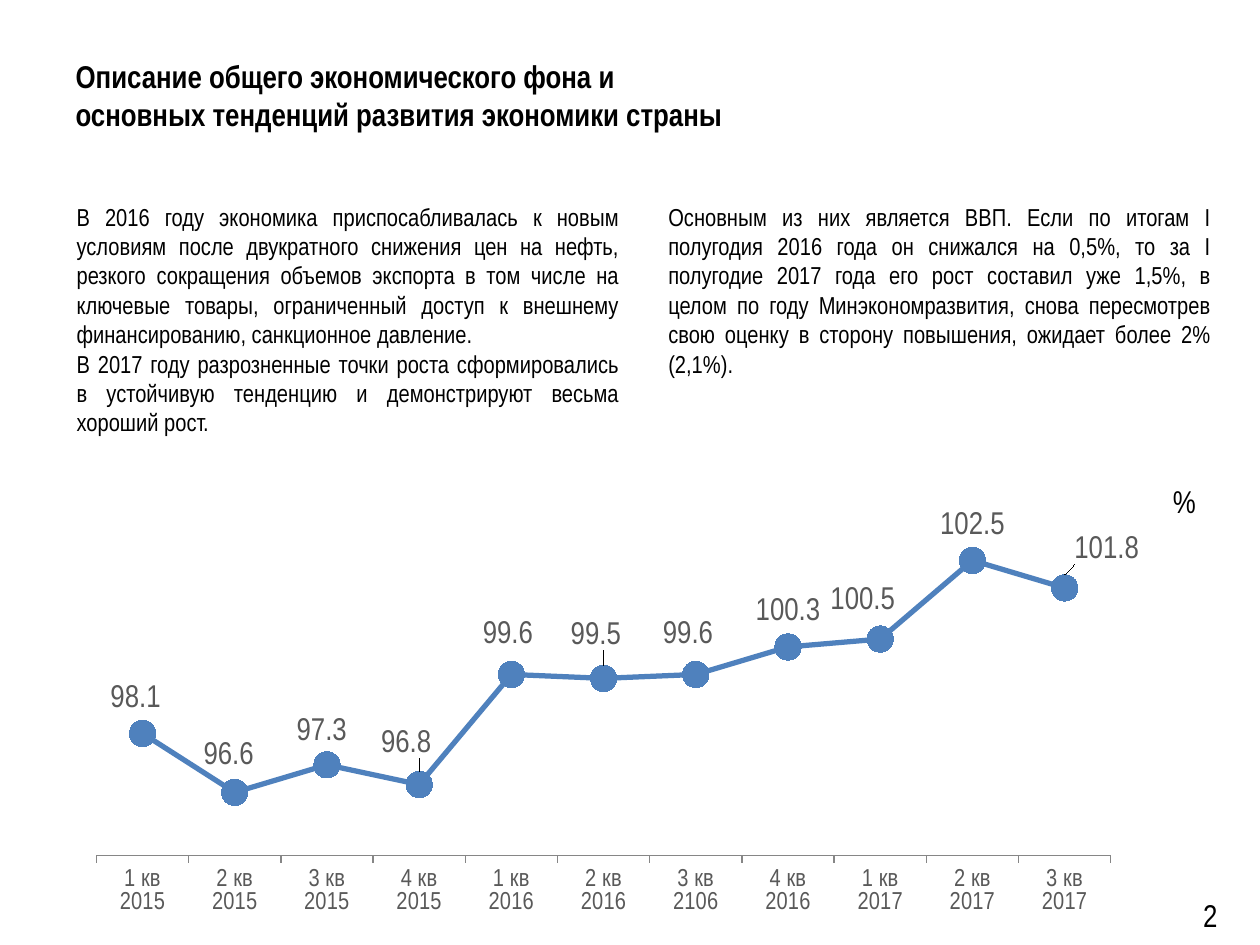
from lxml.etree import SubElement
from pptx import Presentation
from pptx.chart.data import CategoryChartData
from pptx.dml.color import RGBColor
from pptx.enum.chart import XL_CHART_TYPE, XL_LABEL_POSITION, XL_MARKER_STYLE, XL_TICK_MARK
from pptx.enum.text import MSO_ANCHOR, MSO_AUTO_SIZE, PP_ALIGN
from pptx.oxml import parse_xml
from pptx.oxml.ns import nsdecls, qn
from pptx.util import Pt


def paint(colored, hex_color):
    if hasattr(colored, "solid"):
        colored.solid()
        colored = colored.fore_color
    else:
        colored = colored.color
    colored.rgb = RGBColor.from_string(hex_color)


def style(font, size, hex_color="000000", bold=False):
    for name, value in {"name": "Arial Narrow", "size": Pt(size), "bold": bold}.items():
        setattr(font, name, value)
    paint(font.fill, hex_color)


deck = Presentation()
deck.slide_width, deck.slide_height = Pt(720), Pt(540)
slide = deck.slides.add_slide(deck.slide_layouts[5])

heading = slide.shapes.title
for name, value in {"left": 36, "top": 9.36, "width": 648, "height": 90}.items():
    setattr(heading, name, Pt(value))
heading.text_frame.text = "Описание общего экономического фона и \vосновных тенденций развития экономики страны"
heading.text_frame.vertical_anchor = MSO_ANCHOR.MIDDLE
heading.text_frame.paragraphs[0].alignment = PP_ALIGN.LEFT
for run in heading.text_frame.paragraphs[0].runs:
    style(run.font, 18, bold=True)

growth = {
    "1 кв 2015": (98.1, -4, -1), "2 кв 2015": (96.6, -3.5, -2),
    "3 кв 2015": (97.3, -3, 0), "4 кв 2015": (96.8, -7.5, -4.5),
    "1 кв 2016": (99.6, -2, -3.5), "2 кв 2016": (99.5, -4.5, -5.5),
    "3 кв 2106": (99.6, -4.5, -3.5), "4 кв 2016": (100.3, 0, -1),
    "1 кв 2017": (100.5, -10, -3), "2 кв 2017": (102.5, 0, -1),
    "3 кв 2017": (101.8, 24, -3),
}
quarters = CategoryChartData()
quarters.categories = list(growth)
quarters.add_series("Series 1", [value for value, _, _ in growth.values()])
chart_width, chart_height = 614.16, 266.4
chart = slide.shapes.add_chart(XL_CHART_TYPE.LINE_MARKERS, Pt(36.72), Pt(264.24),
                               Pt(chart_width), Pt(chart_height), quarters).chart
chart.has_legend = False
chart.has_title = False
chart.font.size, chart.font.name = Pt(18), "Calibri"
chart.plots[0].vary_by_categories = False

scale = chart.value_axis
for name, value in {"minimum_scale": 95, "maximum_scale": 103.5,
                    "has_major_gridlines": False, "visible": False}.items():
    setattr(scale, name, value)
timeline = chart.category_axis
timeline.major_tick_mark = XL_TICK_MARK.OUTSIDE
style(timeline.tick_labels.font, 14, "595959")
paint(timeline.format.line, "868686")

gdp = chart.plots[0].series[0]
gdp.smooth = False
gdp.format.line.width = Pt(3)
paint(gdp.format.line, "4F81BD")
gdp.marker.style, gdp.marker.size = XL_MARKER_STYLE.CIRCLE, 15
paint(gdp.marker.format.fill, "4F81BD")
gdp.marker.format.line.fill.background()

gdp.data_labels.show_value = True
gdp.data_labels.position = XL_LABEL_POSITION.ABOVE
style(gdp.data_labels.font, 18, "595959")
for index in range(len(growth)):
    label = gdp.points[index].data_label
    label.position = XL_LABEL_POSITION.ABOVE
    style(label.font, 18, "595959")

layouts = [{"x": dx / chart_width, "y": dy / chart_height} for _, dx, dy in growth.values()]
point_labels = gdp.data_labels._element.findall(qn("c:dLbl"))
for point_label, offset in zip(point_labels, layouts):
    layout = parse_xml(f"<c:layout {nsdecls('c')}><c:manualLayout/></c:layout>")
    for name, value in offset.items():
        SubElement(layout[0], qn(f"c:{name}")).set("val", f"{value:.4f}")
    point_label.insert(1, layout)

plot_area = chart._chartSpace.chart.plotArea
for old_layout in plot_area.findall(qn("c:layout")):
    plot_area.remove(old_layout)
plot_layout = parse_xml(f"<c:layout {nsdecls('c')}><c:manualLayout/></c:layout>")
for name, value in {"layoutTarget": "inner", "xMode": "edge", "yMode": "edge",
                    "x": 0.03, "y": 0.126, "w": 0.945, "h": 0.717}.items():
    SubElement(plot_layout[0], qn(f"c:{name}")).set("val", str(value))
plot_area.insert(0, plot_layout)

overview = [
    "В 2016 году экономика приспосабливалась к новым условиям после двукратного снижения цен на нефть, "
    "резкого сокращения объемов экспорта в том числе на ключевые товары, ограниченный доступ к внешнему "
    "финансированию, санкционное давление.",
    "В 2017 году разрозненные точки роста сформировались в устойчивую тенденцию и демонстрируют весьма "
    "хороший рост.",
    "Основным из них является ВВП. Если по итогам I полугодия 2016 года он снижался на 0,5%, то за "
    "I полугодие 2017 года его рост составил уже 1,5%, в целом по году Минэкономразвития, снова "
    "пересмотрев свою оценку в сторону повышения, ожидает более 2% (2,1%). ",
]
frames = []
for box, lines, size, alignment in [
    ((36.72, 111.6, 662.4, 143.28), overview, 14, PP_ALIGN.JUSTIFY),
    ((663.12, 491.04, 56.88, 54.72), ["2"], 18, PP_ALIGN.CENTER),
    ((663.12, 272.16, 31.68, 28.8), ["%"], 18, PP_ALIGN.LEFT),
]:
    frame = slide.shapes.add_textbox(*map(Pt, box)).text_frame
    frame.word_wrap = True
    frame.text = "\n".join(lines)
    for paragraph in frame.paragraphs:
        paragraph.alignment = alignment
        style(paragraph.runs[0].font, size)
    frames.append(frame)

columns, page_number, unit = frames
columns.auto_size = unit.auto_size = MSO_AUTO_SIZE.SHAPE_TO_FIT_TEXT
for name, value in {"numCol": 2, "spcCol": Pt(28)}.items():
    columns._txBody.bodyPr.set(name, str(value))
page_number.vertical_anchor = MSO_ANCHOR.MIDDLE
page_number.paragraphs[0].line_spacing = Pt(30.1)
for name, value in {"margin_left": 8, "margin_right": 8, "margin_top": 4, "margin_bottom": 4}.items():
    setattr(page_number, name, Pt(value))

deck.save("out.pptx")
